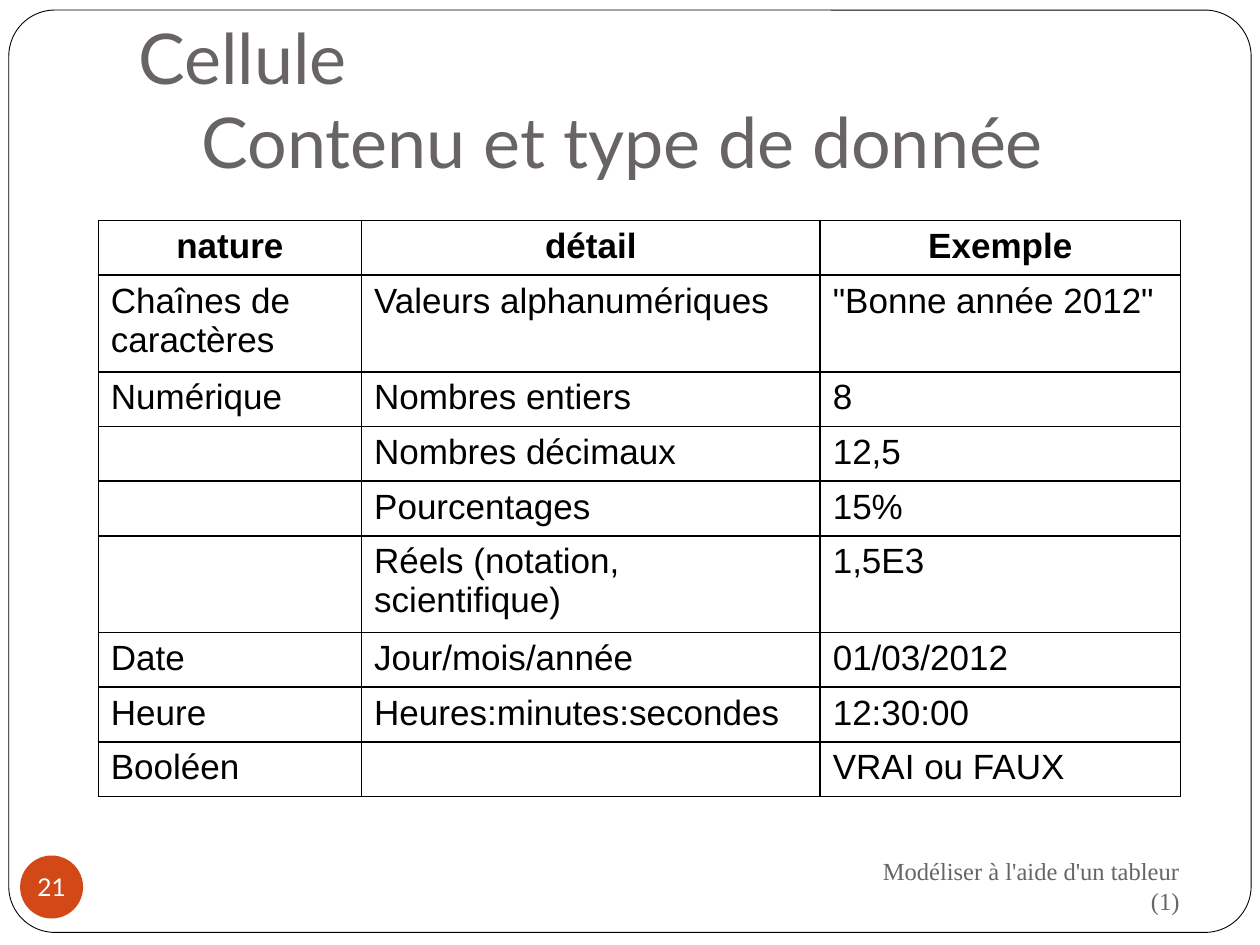
import pptx
import pptx.dml.color
import pptx.enum.shapes
import pptx.enum.text
import pptx.oxml
import pptx.oxml.ns
import pptx.util

RGBColor = pptx.dml.color.RGBColor
Align = pptx.enum.text.PP_ALIGN
Anchor = pptx.enum.text.MSO_ANCHOR
Shape = pptx.enum.shapes.MSO_SHAPE

BLACK = RGBColor(0x00, 0x00, 0x00)
WHITE = RGBColor(0xFF, 0xFF, 0xFF)
GREY = RGBColor(0x69, 0x64, 0x64)
ORANGE = RGBColor(0xD3, 0x48, 0x17)

COLUMNS, ROWS = 20, 15

TYPES = [
    ("nature", "détail", "Exemple"),
    ("Chaînes de caractères", "Valeurs alphanumériques", "\"Bonne année 2012\""),
    ("Numérique", "Nombres entiers", "8"),
    ("", "Nombres décimaux", "12,5"),
    ("", "Pourcentages", "15%"),
    ("", "Réels (notation, scientifique)", "1,5E3"),
    ("Date", "Jour/mois/année", "01/03/2012"),
    ("Heure", "Heures:minutes:secondes", "12:30:00"),
    ("Booléen", "", "VRAI ou FAUX"),
]


class Deck:
    """Slide builder whose lengths are columns and rows of a 20 by 15 grid."""

    heading_font = "Lato"
    table_font = "Arial"
    footer_font = "Times New Roman"

    def __init__(self):
        self.prs = pptx.Presentation()
        self.prs.slide_width = pptx.util.Inches(10)
        self.prs.slide_height = pptx.util.Inches(7.5)
        self.slide = self.prs.slides.add_slide(self.prs.slide_layouts[5])

    def x(self, columns):
        return round(self.prs.slide_width * columns / COLUMNS)

    def y(self, rows):
        return round(self.prs.slide_height * rows / ROWS)

    def box(self, left, top, width, height):
        return self.x(left), self.y(top), self.x(width), self.y(height)

    def run(self, p, text, font, size, color, bold=False):
        r = p.add_run()
        r.text = text
        r.font.name = font
        r.font.size = pptx.util.Pt(size)
        r.font.color.rgb = color
        r.font.bold = bold

    def title(self, lines, *area):
        sp = self.slide.shapes.title
        sp.left, sp.top, sp.width, sp.height = self.box(*area)
        tf = sp.text_frame
        tf.auto_size = pptx.enum.text.MSO_AUTO_SIZE.NONE
        tf.vertical_anchor = Anchor.BOTTOM
        tf.margin_bottom = pptx.util.Inches(0.1)
        p = tf.paragraphs[0]
        p.alignment = Align.LEFT
        for i, line in enumerate(lines):
            if i:
                p.add_line_break()
            self.run(p, line, self.heading_font, 40, GREY)

    def shape(self, kind, fill, *area):
        sp = self.slide.shapes.add_shape(kind, *self.box(*area))
        sp.shadow.inherit = False
        sp.fill.solid()
        sp.fill.fore_color.rgb = fill
        sp.line.fill.background()
        return sp

    def frame(self, *area):
        sp = self.shape(Shape.ROUNDED_RECTANGLE, WHITE, *area)
        sp.adjustments[0] = 0.05
        sp.line.color.rgb = BLACK
        sp.line.width = pptx.util.Pt(0.5)
        tree = self.slide.shapes.title.element.getparent()
        tree.insert(tree.index(self.slide.shapes.title.element), sp.element)

    def badge(self, text, *area):
        tf = self.shape(Shape.OVAL, ORANGE, *area).text_frame
        tf.margin_left = tf.margin_right = tf.margin_top = tf.margin_bottom = 0
        tf.word_wrap = False
        tf.vertical_anchor = Anchor.MIDDLE
        p = tf.paragraphs[0]
        p.alignment = Align.CENTER
        self.run(p, text, self.heading_font, 14, WHITE)

    def footer(self, text, *area):
        tf = self.slide.shapes.add_textbox(*self.box(*area)).text_frame
        tf.word_wrap = True
        tf.vertical_anchor = Anchor.MIDDLE
        p = tf.paragraphs[0]
        p.alignment = Align.RIGHT
        self.run(p, text, self.footer_font, 14, GREY)

    def borders(self, cell):
        tcPr = cell._tc.get_or_add_tcPr()
        for i, side in enumerate("LRTB"):
            tcPr.insert(i, pptx.oxml.parse_xml(
                f'<a:ln{side} {pptx.oxml.ns.nsdecls("a")} w="12700"><a:solidFill>'
                f'<a:srgbClr val="{BLACK}"/></a:solidFill></a:ln{side}>'))

    def table(self, rows, left, top, widths, height):
        area = self.box(left, top, sum(widths), height * len(rows))
        table = self.slide.shapes.add_table(len(rows), len(widths), *area).table
        table.first_row = table.horz_banding = False
        for column, width in zip(table.columns, widths):
            column.width = self.x(width)
        for i, row in enumerate(rows):
            table.rows[i].height = self.y(height)
            for j, text in enumerate(row):
                cell = table.cell(i, j)
                cell.fill.background()
                self.borders(cell)
                p = cell.text_frame.paragraphs[0]
                p.alignment = Align.LEFT if i else Align.CENTER
                if text:
                    self.run(p, text, self.table_font, 20, BLACK, bold=i == 0)


def main():
    deck = Deck()
    deck.frame(0.14, 0.16, 19.72, 14.64)
    deck.title(["Cellule", "\tContenu et type de donnée"], 2, 0.6, 17, 2.5)
    deck.footer("Modéliser à l'aide d'un tableur (1)", 13.5, 13.54, 5.42, 1.04)
    deck.badge("21", 0.32, 13.58, 1, 1)
    deck.table(TYPES, 1.56, 3.5, [4.18, 7.28, 5.72], 0.82)
    deck.prs.save("out.pptx")


if __name__ == "__main__":
    main()
